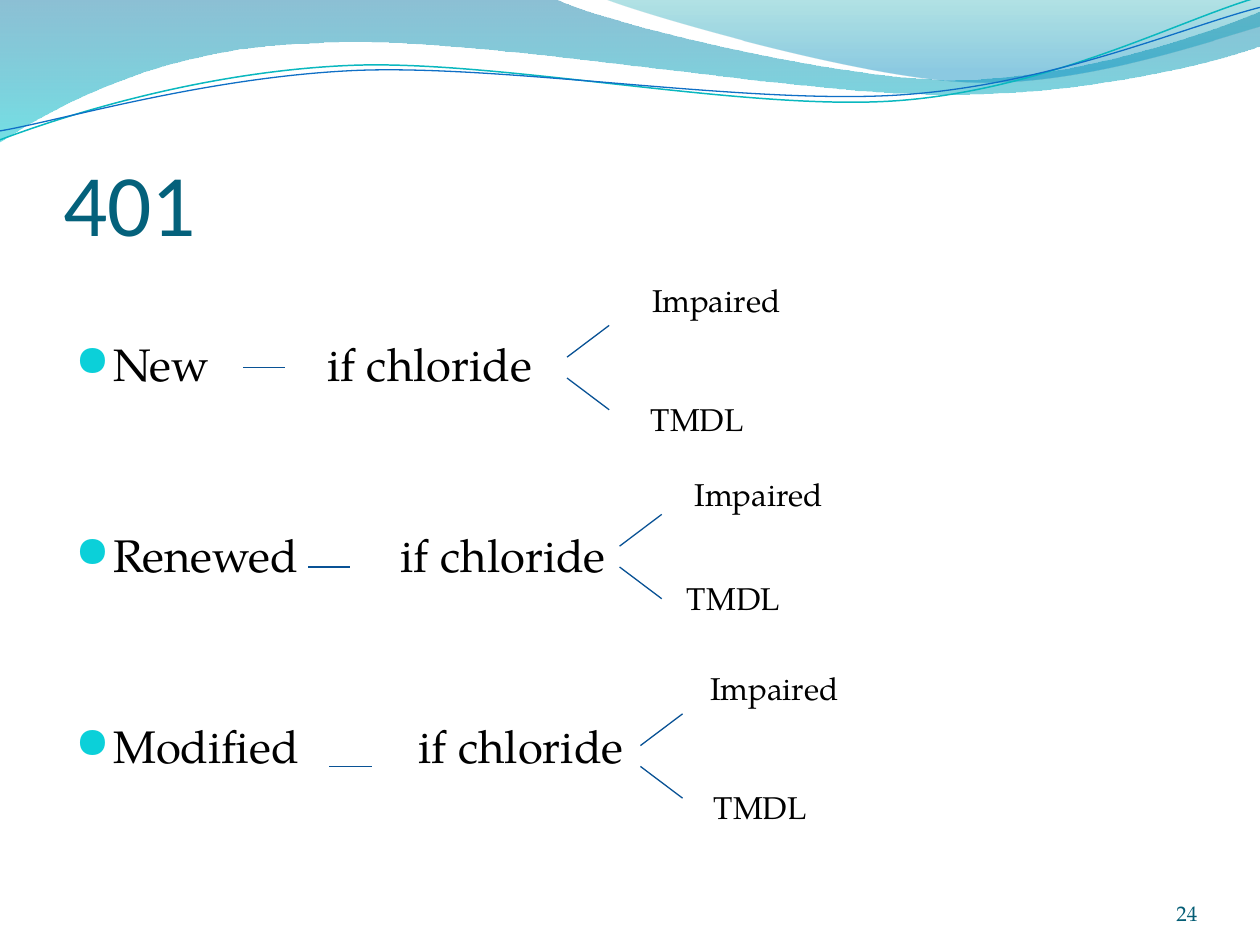
from lxml import etree
from pptx import Presentation
from pptx.dml.color import RGBColor
from pptx.enum.shapes import MSO_CONNECTOR
from pptx.enum.text import MSO_ANCHOR, MSO_AUTO_SIZE, PP_ALIGN
from pptx.oxml.ns import qn
from pptx.util import Cm, Pt

STRAIGHT = MSO_CONNECTOR.STRAIGHT
BOTTOM, TOP = MSO_ANCHOR.BOTTOM, MSO_ANCHOR.TOP
LEFT, RIGHT = PP_ALIGN.LEFT, PP_ALIGN.RIGHT
FIXED = MSO_AUTO_SIZE.NONE
SERIF = "TeX Gyre Pagella"

HUES = {
    "title": "04617B", "text": "000000", "page": "045D75",
    "bullet": "0BD0D9", "branch": "095295", "teal": "0AB8BF",
    "blue": "0F6FC6", "deep": "0074A1", "aqua": "00C6CF",
    "sea": "00A1A9", "sky": "008BBF",
}

BANDS = [
    ((0, 0), [
        [(11.18, -0.03)],
        [(12.09, 0.43), (16.87, 1.6), (19.25, 1.6)],
        [(21.67, 1.6), (24.33, 0.66), (25.4, 0.23)],
        [(25.43, 0.91)],
        [(24.97, 1.12), (22.1, 1.93), (18.95, 1.9)],
        [(15.8, 1.9), (9.7, 0.71), (6.53, 0.86)],
        [(3.28, 0.91), (1.17, 2.11), (-0.03, 2.87)],
    ], [(0, "deep", 45), (1, "aqua", 55)]),
    ((12.17, -0.03), [
        [(12.93, 0.28), (17.32, 1.57), (19.53, 1.65)],
        [(21.74, 1.75), (24.41, 0.81), (25.4, 0.53)],
        [(25.4, 0)],
    ], [(0, "sea", 30), (0.8, "sky", 45)]),
]

WAVES = [
    ((0, 2.82), [
        [(1.22, 2.36), (4.01, 1.45), (7.04, 1.32)],
        [(10.03, 1.19), (15.06, 2.26), (18.11, 2.03)],
        [(21.16, 1.8), (23.83, 0.38), (25.35, -0.05)],
    ], "teal", 0.85),
    ((0, 2.64), [
        [(1.19, 2.44), (4.17, 1.55), (7.19, 1.42)],
        [(10.24, 1.3), (15.16, 2.13), (18.21, 1.91)],
        [(21.23, 1.7), (23.9, 0.53), (25.4, 0.15)],
    ], "blue", 0.75),
]

ROWS = [
    {"name": "New", "tab": 5.08, "dash": (4.9, 7.41), "fork": (11.43, 7.41),
     "top": (12.9, 5.54), "low": (12.87, 7.93)},
    {"name": "Renewed", "tab": 6.56, "dash": (6.21, 11.43), "fork": (12.49, 11.22),
     "top": (13.76, 9.45), "low": (13.6, 11.55)},
    {"name": "Modified", "tab": 6.92, "dash": (6.64, 15.45), "fork": (12.91, 15.24),
     "top": (14.07, 13.36), "low": (14.14, 15.75)},
]

REACH, GAP, RISE = 0.85, 0.21, 0.64


def tint(name):
    return RGBColor.from_string(HUES[name])


def place(shape, left, top, width, height):
    box = {"left": left, "top": top, "width": width, "height": height}
    for key, value in box.items():
        setattr(shape, key, Cm(value))


def frame(shape, inset=(0.25, 0.13, 0.25, 0.13), anchor=TOP):
    sides = ("margin_left", "margin_top", "margin_right", "margin_bottom")
    form = dict(zip(sides, map(Cm, inset)))
    form.update(word_wrap=True, auto_size=FIXED, vertical_anchor=anchor)
    for key, value in form.items():
        setattr(shape.text_frame, key, value)
    return shape.text_frame


def write(para, text, size, hue="text", face=SERIF, align=LEFT):
    run = para.add_run()
    run.text = text
    para.alignment = align
    for key, value in {"size": Pt(size), "name": face, "bold": False}.items():
        setattr(run.font, key, value)
    run.font.color.rgb = tint(hue)


def label(slide, text, box, size=18, hue="text", align=LEFT, **form):
    shape = slide.shapes.add_textbox(*map(Cm, box))
    write(frame(shape, **form).paragraphs[0], text, size, hue, align=align)


def line(slide, start, end):
    link = slide.shapes.add_connector(STRAIGHT, *map(Cm, start + end))
    link.line.color.rgb = tint("branch")
    link.line.width = Pt(0.75)
    etree.SubElement(link._element.spPr, qn("a:effectLst"))


def curve(slide, start, parts, close):
    pen = slide.shapes.build_freeform(*map(Cm, start), scale=1.0)
    spots = [(Cm(x), Cm(y)) for part in parts for x, y in part]
    pen.add_line_segments(spots, close=close)
    shape = pen.convert_to_shape()
    shape.shadow.inherit = False
    nodes = iter(list(shape._element.spPr.iter(qn("a:lnTo"))))
    for part in parts:
        group = [next(nodes) for _ in part]
        if len(group) == 3:
            bend = etree.Element(qn("a:cubicBezTo"))
            group[0].addprevious(bend)
            for node in group:
                bend.append(node[0])
                node.getparent().remove(node)
    return shape


def band(slide, start, parts, stops):
    shape = curve(slide, start, parts, True)
    shape.line.fill.background()
    shape.fill.gradient()
    shape.fill.gradient_angle = 270
    for stop, (spot, hue, _) in zip(shape.fill.gradient_stops, stops):
        stop.position = spot
        stop.color.rgb = tint(hue)
    for node, (_, _, alpha) in zip(shape._element.spPr.iter(qn("a:srgbClr")), stops):
        etree.SubElement(node, qn("a:alpha"), val=str(alpha * 1000))


def wave(slide, start, parts, hue, width):
    shape = curve(slide, start, parts, False)
    shape.fill.background()
    shape.line.color.rgb = tint(hue)
    shape.line.width = Pt(width)


def bullet(para, name, tab, space):
    write(para, f"{name}\tif chloride", 26)
    para.space_before = Pt(space)
    props = para._p.get_or_add_pPr()
    props.set("marL", str(Cm(0.76)))
    props.set("indent", str(-Cm(0.76)))
    color = etree.SubElement(props, qn("a:buClr"))
    etree.SubElement(color, qn("a:srgbClr"), val=HUES["bullet"])
    etree.SubElement(props, qn("a:buSzPct"), val="95000")
    etree.SubElement(props, qn("a:buFont"), typeface="OpenSymbol")
    etree.SubElement(props, qn("a:buChar"), char="●")
    tabs = etree.SubElement(props, qn("a:tabLst"))
    etree.SubElement(tabs, qn("a:tab"), pos=str(Cm(tab)), algn="l")


def branch(slide, row):
    x, y = row["dash"]
    line(slide, (x, y), (x + REACH, y))
    x, y = row["fork"]
    for sign in (-1, 1):
        near = y + sign * GAP
        line(slide, (x, near), (x + REACH, near + sign * RISE))
    label(slide, "Impaired", row["top"] + (3.48, 1.02))
    label(slide, "TMDL", row["low"] + (4.01, 1.02))


def main():
    deck = Presentation()
    deck.slide_width, deck.slide_height = Cm(25.4), Cm(19.05)
    slide = deck.slides.add_slide(deck.slide_layouts[1])
    for item in BANDS:
        band(slide, *item)
    for item in WAVES:
        wave(slide, *item)

    title, body = slide.placeholders
    place(title, 1.27, 1.95, 22.86, 3.18)
    head = frame(title, inset=(0, 0.13, 0, 0), anchor=BOTTOM)
    write(head.paragraphs[0], "401", 50, "title", "Calibri")

    place(body, 1.27, 5.38, 22.86, 12.19)
    text = frame(body, inset=(0.25, 1.4, 0.25, 0.13))
    for spot, row in enumerate(ROWS):
        para = text.add_paragraph() if spot else text.paragraphs[0]
        bullet(para, row["name"], row["tab"], 77.8 if spot else 0)
        branch(slide, row)

    label(slide, "24", (22.02, 17.65, 2.12, 1.02), 12, "page", RIGHT,
          inset=(0, 0, 0, 0), anchor=BOTTOM)
    deck.save("out.pptx")


if __name__ == "__main__":
    main()
